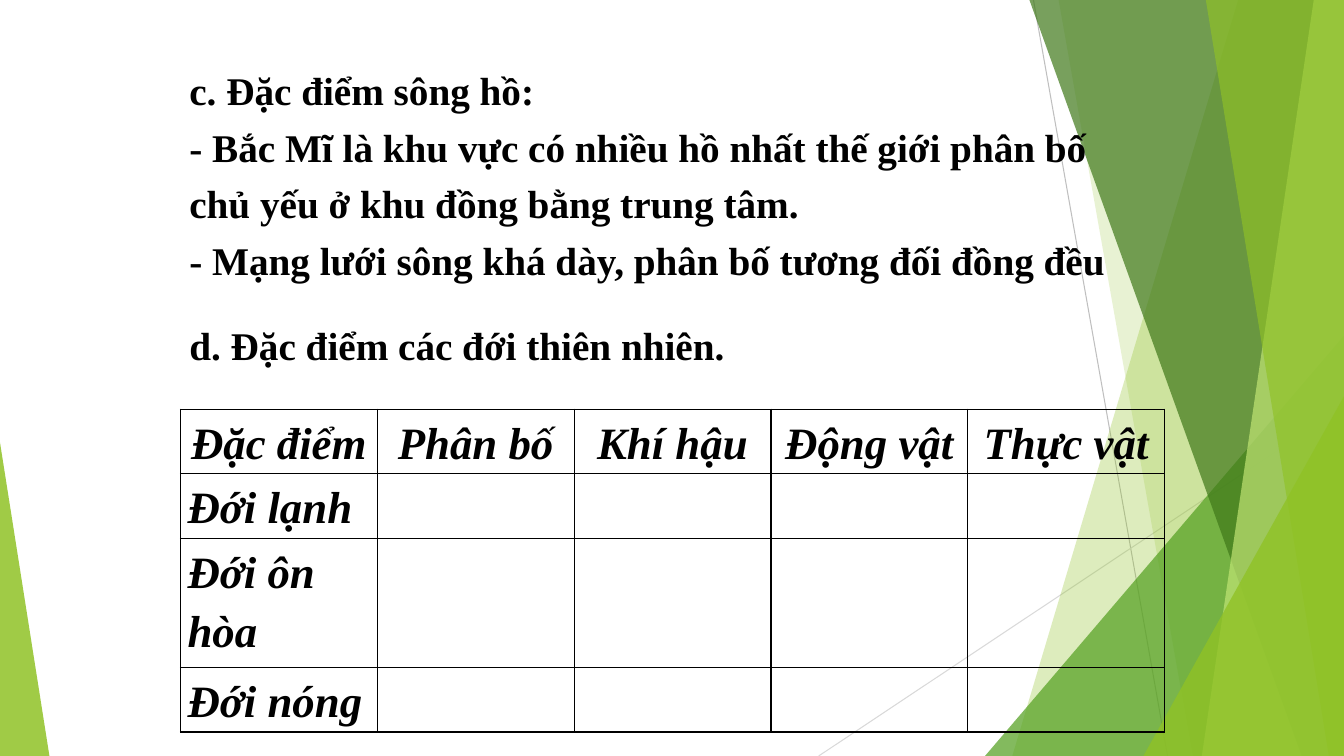
"""Build the slide on rivers, lakes and natural zones of North America."""
from lxml.etree import SubElement
from pptx import Presentation
from pptx.dml.color import RGBColor
from pptx.enum.shapes import MSO_CONNECTOR, MSO_SHAPE
from pptx.enum.text import MSO_ANCHOR, PP_ALIGN
from pptx.oxml.ns import qn
from pptx.util import Inches, Pt

BLACK = RGBColor(0x00, 0x00, 0x00)
LIME = RGBColor(0x90, 0xC2, 0x26)
GREEN = RGBColor(0x54, 0xA0, 0x21)
FOREST = RGBColor(0x3F, 0x78, 0x19)
PALE_LIME = RGBColor(0xC0, 0xE4, 0x74)
GRAY = RGBColor(0xBF, 0xBF, 0xBF)
LIGHT_GRAY = RGBColor(0xD9, 0xD9, 0xD9)
WIDTH, HEIGHT = 13.33, 7.5

deck = Presentation()
deck.slide_width, deck.slide_height = Inches(WIDTH), Inches(HEIGHT)
page = deck.slides.add_slide(deck.slide_layouts[6])


def paint(shape, color, opacity):
    """Give a shape a translucent fill without line or shadow."""
    shape.shadow.inherit = False
    shape.line.fill.background()
    shape.fill.solid()
    shape.fill.fore_color.rgb = color
    color_node = shape.fill._xPr.find(qn("a:solidFill"))[0]
    SubElement(color_node, qn("a:alpha"), val=str(opacity * 1000))


def write(para, text, size, italic=False):
    """Add one bold run to a paragraph."""
    para.line_spacing = 1.2
    span = para.add_run()
    span.text = text
    span.font.name = "Times New Roman"
    span.font.size = Pt(size)
    span.font.bold = True
    span.font.italic = italic
    span.font.color.rgb = BLACK


for start_x, start_y, end_x, color in (
    (10.25, 0, 11.58, GRAY),
    (WIDTH, 4.03, 8.12, LIGHT_GRAY),
):
    ray = page.shapes.add_connector(
        MSO_CONNECTOR.STRAIGHT,
        Inches(start_x), Inches(start_y), Inches(end_x), Inches(HEIGHT))
    ray.line.color.rgb = color
    ray.line.width = Pt(0.75)
    SubElement(ray._element.spPr, qn("a:effectLst"))

bands = [
    (12.28, 10.04, LIME, 30),
    (10.5, 11.83, LIME, 20),
    (9.77, 3.33, 3.56, 1, GREEN, 72),
    (10.21, 12.91, FOREST, 70),
    (13.03, 11.92, PALE_LIME, 70),
    (11.96, 13.18, LIME, 65),
    (11.34, 3.93, 1.99, 1, LIME, 80),
    (0, 4.39, 0.49, 0, LIME, 85),
]
for *place, color, opacity in bands:
    if len(place) == 2:
        top_x, bottom_x = place
        outline = page.shapes.build_freeform(
            Inches(top_x), 0)
        outline.add_line_segments([
            (Inches(x), Inches(y)) for x, y in
            ((WIDTH, 0), (WIDTH, HEIGHT), (bottom_x, HEIGHT))])
        facet = outline.convert_to_shape()
    else:
        left, top, width, apex = place
        facet = page.shapes.add_shape(
            MSO_SHAPE.ISOSCELES_TRIANGLE,
            Inches(left), Inches(top), Inches(width), Inches(HEIGHT - top))
        facet.adjustments[0] = apex
    paint(facet, color, opacity)

sections = [
    (0.52, 9.76, 2.36, [
        "c. Đặc điểm sông hồ:",
        "- Bắc Mĩ là khu vực có nhiều hồ nhất thế giới phân bố chủ yếu ở khu đồng bằng trung tâm.",
        "- Mạng lưới sông khá dày, phân bố tương đối đồng đều",
    ]),
    (3.05, 7.87, 0.67, ["d. Đặc điểm các đới thiên nhiên."]),
]
for top, width, height, lines in sections:
    box = page.shapes.add_textbox(
        Inches(1.78), Inches(top), Inches(width), Inches(height))
    frame = box.text_frame
    frame.word_wrap = True
    for index, line in enumerate(lines):
        para = frame.paragraphs[0] if index == 0 else frame.add_paragraph()
        write(para, line, 28)

headings = ["Đặc điểm", "Phân bố", "Khí hậu", "Động vật", "Thực vật"]
zones = ["Đới lạnh", "Đới ôn hòa", "Đới nóng"]
row_heights = [0.64, 0.64, 1.28, 0.64]
rows = [headings] + [[zone] + [""] * 4 for zone in zones]
table = page.shapes.add_table(
    len(rows), len(headings), Inches(1.79), Inches(4.06),
    Inches(9.76), Inches(sum(row_heights))).table
table.first_row = False
table.horz_banding = False
for row, height in zip(table.rows, row_heights):
    row.height = Inches(height)
for row_index, texts in enumerate(rows):
    for column_index, text in enumerate(texts):
        cell = table.cell(row_index, column_index)
        cell.margin_left = cell.margin_right = Inches(0.07)
        cell.margin_top = cell.margin_bottom = 0
        cell.vertical_anchor = MSO_ANCHOR.TOP
        for side in ("lnL", "lnR", "lnT", "lnB"):
            border = SubElement(
                cell._tc.tcPr, qn(f"a:{side}"), w=str(Pt(1)))
            border_fill = SubElement(border, qn("a:solidFill"))
            SubElement(border_fill, qn("a:srgbClr"), val=str(BLACK))
        cell.fill.background()
        if text:
            para = cell.text_frame.paragraphs[0]
            para.alignment = PP_ALIGN.CENTER if row_index == 0 else PP_ALIGN.LEFT
            write(para, text, 32, italic=True)

deck.save("out.pptx")
